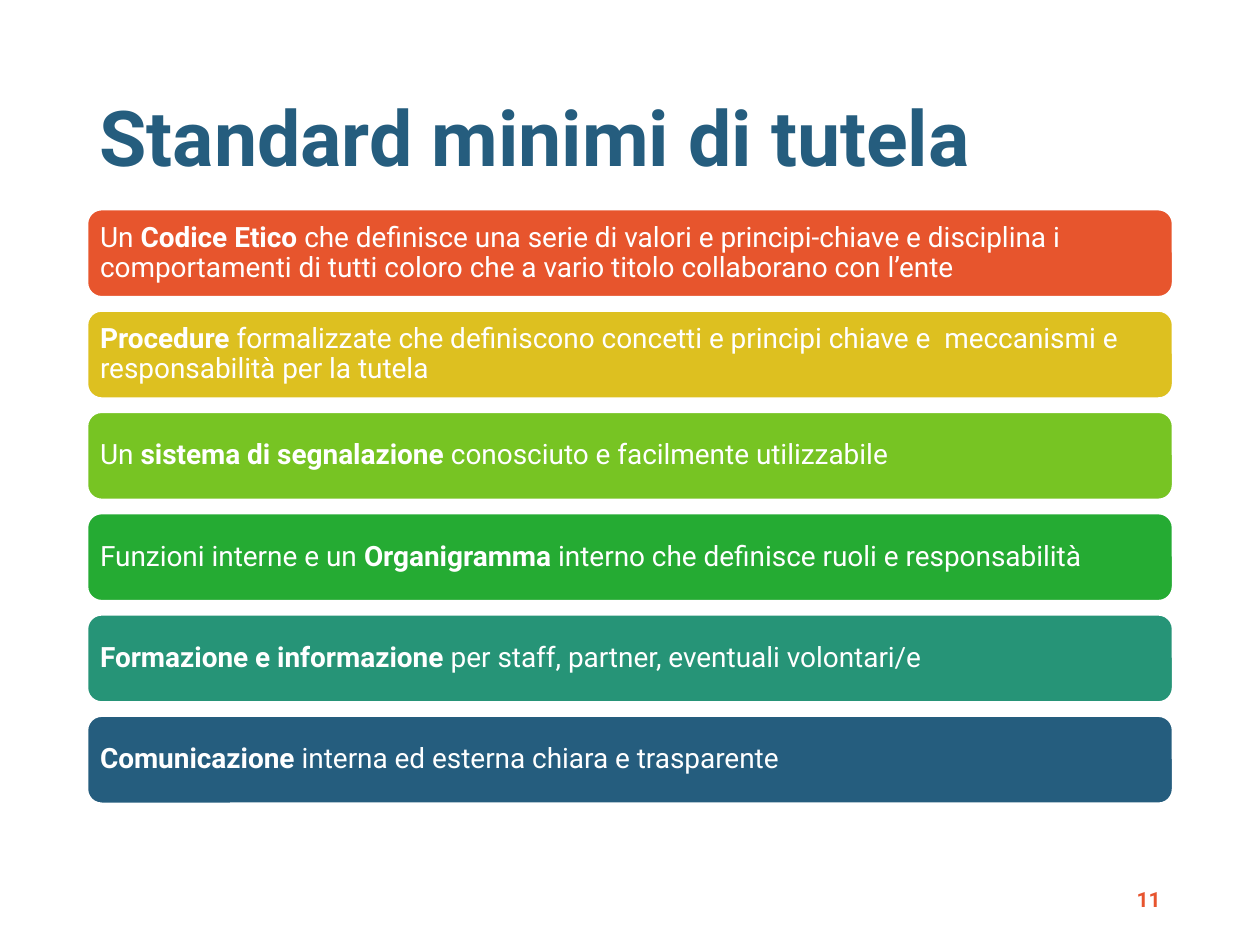
from pptx import Presentation
from pptx.dml.color import RGBColor
from pptx.enum.shapes import MSO_SHAPE
from pptx.enum.text import MSO_ANCHOR, MSO_AUTO_SIZE, PP_ALIGN
from pptx.util import Inches, Pt

ROUNDED = MSO_SHAPE.ROUNDED_RECTANGLE
MIDDLE = MSO_ANCHOR.MIDDLE
NO_FIT = MSO_AUTO_SIZE.NONE
LEFT, RIGHT = PP_ALIGN.LEFT, PP_ALIGN.RIGHT

WHITE = RGBColor(0xFF, 0xFF, 0xFF)
ORANGE = RGBColor(0xE7, 0x55, 0x2D)
YELLOW = RGBColor(0xDD, 0xC0, 0x20)
LIME = RGBColor(0x77, 0xC4, 0x23)
GREEN = RGBColor(0x25, 0xAB, 0x33)
TEAL = RGBColor(0x26, 0x94, 0x77)
BLUE = RGBColor(0x25, 0x5D, 0x7E)
NUMBER_ORANGE = RGBColor(0xE7, 0x54, 0x2E)

MARGIN, CONTENT_WIDTH = 0.69, 8.62
FIRST_TOP, LAST_TOP, BAR_HEIGHT = 1.66, 5.68, 0.7

STANDARDS = [
    (ORANGE, [("Un", False), (" Codice Etico ", True),
              ("che definisce una serie di valori e principi-chiave e disciplina i "
               "comportamenti di tutti coloro che a vario titolo collaborano con l’ente", False)]),
    (YELLOW, [("Procedure", True),
              (" formalizzate che definiscono concetti e principi chiave e  meccanismi e "
               "responsabilità per la tutela", False)]),
    (LIME, [("Un ", False), ("sistema di segnalazione ", True),
            ("conosciuto e facilmente utilizzabile", False)]),
    (GREEN, [("Funzioni interne e un ", False), ("Organigramma", True),
             (" interno che definisce ruoli e responsabilità", False)]),
    (TEAL, [("Formazione e informazione ", True),
            ("per staff, partner, eventuali volontari/e", False)]),
    (BLUE, [("Comunicazione", True),
            (" interna ed esterna chiara e trasparente", False)]),
]


class SlideBuilder:
    """Holds the text style and the current slide."""

    font_name = "Roboto"
    line_spacing = 0.9

    def __init__(self, page):
        self.page = page

    def fill_text(self, box, spans, size, color, align=LEFT):
        frame = box.text_frame
        frame.word_wrap = True
        frame.auto_size = NO_FIT
        frame.vertical_anchor = MIDDLE
        para = frame.paragraphs[0]
        para.alignment = align
        para.line_spacing = self.line_spacing
        para.font.name = self.font_name
        para.font.size = Pt(size)
        para.font.color.rgb = color
        for text, bold in spans:
            span = para.add_run()
            span.text = text
            span.font.name = self.font_name
            span.font.size = Pt(size)
            span.font.bold = bold
            span.font.color.rgb = color

    def title(self, text, left, top, width, height):
        box = self.page.shapes.title
        box.left, box.top = Inches(left), Inches(top)
        box.width, box.height = Inches(width), Inches(height)
        self.fill_text(box, [(text, True)], 44, BLUE)

    def page_number(self, text, left, top, width, height):
        box = self.page.shapes.add_textbox(
            Inches(left), Inches(top), Inches(width), Inches(height))
        self.fill_text(box, [(text, True)], 12, NUMBER_ORANGE, RIGHT)

    def bar(self, spans, fill, left, top, width, height):
        box = self.page.shapes.add_shape(
            ROUNDED, Inches(left), Inches(top), Inches(width), Inches(height))
        box.shadow.inherit = False
        box.fill.solid()
        box.fill.fore_color.rgb = fill
        box.line.color.rgb = WHITE
        box.line.width = Pt(1.5)
        frame = box.text_frame
        frame.margin_left = frame.margin_right = Inches(0.07)
        frame.margin_top = frame.margin_bottom = Inches(0.07)
        self.fill_text(box, spans, 16, WHITE)


def main():
    deck = Presentation()
    deck.slide_width, deck.slide_height = Inches(10), Inches(7.5)
    builder = SlideBuilder(deck.slides.add_slide(deck.slide_layouts[5]))
    builder.title("Standard minimi di tutela", MARGIN, 0.4, CONTENT_WIDTH, 1.45)
    builder.page_number("11", 7.06, 6.95, 2.25, 0.4)
    pitch = (LAST_TOP - FIRST_TOP) / (len(STANDARDS) - 1)
    for index, (fill, spans) in enumerate(STANDARDS):
        builder.bar(spans, fill, MARGIN, FIRST_TOP + index * pitch, CONTENT_WIDTH, BAR_HEIGHT)
    deck.save("out.pptx")


if __name__ == "__main__":
    main()
